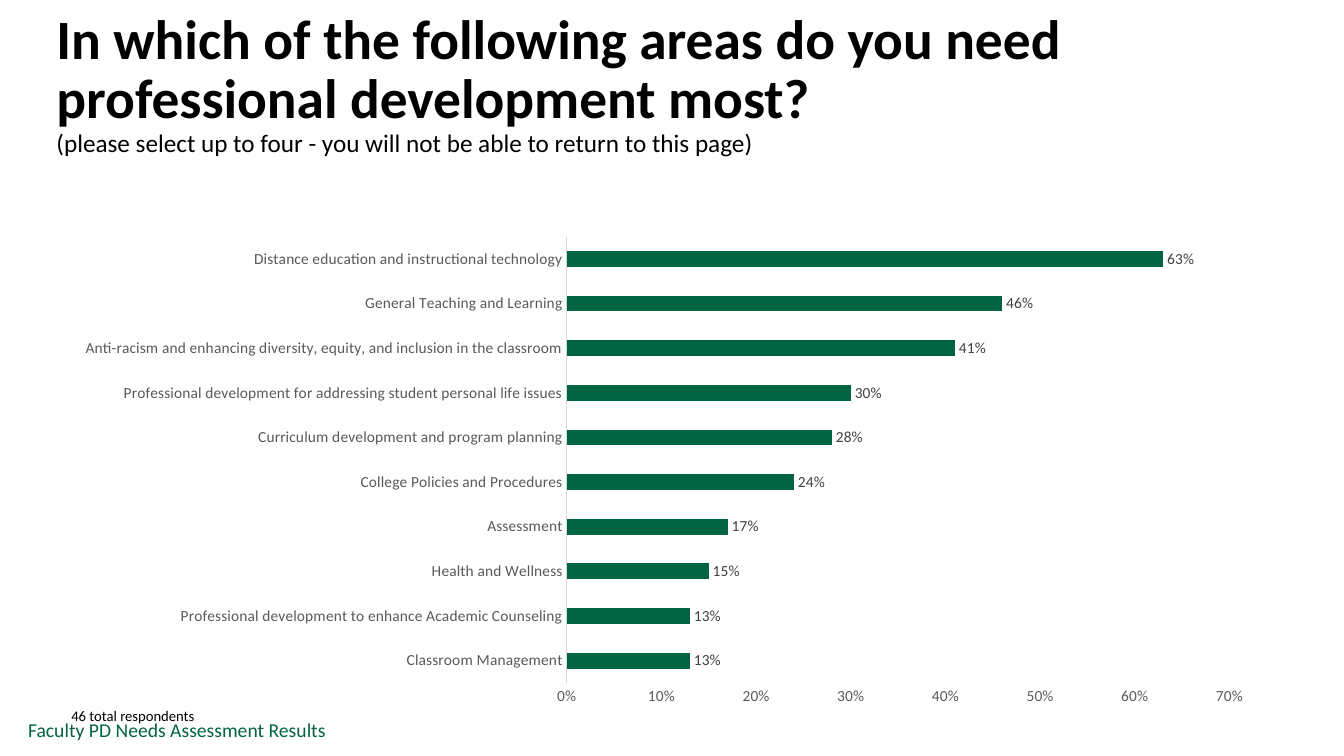
import pptx
import pptx.util
import pptx.chart.data
import pptx.dml.color
import pptx.enum.chart
import pptx.enum.text

Inches = pptx.util.Inches
Pt = pptx.util.Pt
FONT = "Calibri"
COLORS = {"black": "000000", "green": "006342", "axis_text": "595959",
          "label_text": "404040", "axis_line": "D9D9D9"}


def style_font(font, size, color, bold=False):
    font.name = FONT
    font.size = Pt(size)
    font.bold = bold
    font.color.rgb = pptx.dml.color.RGBColor.from_string(COLORS[color])


deck = pptx.Presentation()
deck.slide_width = Inches(13.33)
deck.slide_height = Inches(7.5)
slide = deck.slides.add_slide(deck.slide_layouts[5])

# Question and instruction
question = slide.shapes.title
question.left, question.top = Inches(0.46), Inches(0.4)
question.width, question.height = Inches(11.96), Inches(1.45)
question_frame = question.text_frame
question_frame.text = ("In which of the following areas do you need professional development most?\n"
                       "(please select up to four - you will not be able to return to this page)")
question_frame.word_wrap = True
question_frame.auto_size = pptx.enum.text.MSO_AUTO_SIZE.NONE
question_frame.vertical_anchor = pptx.enum.text.MSO_ANCHOR.MIDDLE
question_frame.margin_bottom = Inches(0.62)
for paragraph, size, bold in zip(question_frame.paragraphs, (39.6, 18), (True, False)):
    paragraph.alignment = pptx.enum.text.PP_ALIGN.LEFT
    paragraph.line_spacing = 0.9
    paragraph.space_before = Pt(0)
    style_font(paragraph.runs[0].font, size, "black", bold)

# Share of respondents per area, listed from the bottom bar up
areas = [
    ("Classroom Management", 0.13),
    ("Professional development to enhance Academic Counseling", 0.13),
    ("Health and Wellness", 0.15),
    ("Assessment", 0.17),
    ("College Policies and Procedures", 0.24),
    ("Curriculum development and program planning", 0.28),
    ("Professional development for addressing student personal life issues", 0.30),
    ("Anti-racism and enhancing diversity, equity, and inclusion in the classroom", 0.41),
    ("General Teaching and Learning", 0.46),
    ("Distance education and instructional technology", 0.63),
]
area_data = pptx.chart.data.CategoryChartData(number_format="0%")
area_data.categories = [area for area, share in areas]
area_data.add_series("Series 1", [share for area, share in areas])
area_chart = slide.shapes.add_chart(
    pptx.enum.chart.XL_CHART_TYPE.BAR_CLUSTERED,
    Inches(0.61), Inches(2.25), Inches(11.96), Inches(4.85), area_data).chart
area_chart.has_title = False
area_chart.has_legend = False
style_font(area_chart.font, 11, "black")

# Bars and their labels
bars = area_chart.plots[0]
bars.gap_width = 182
bars.vary_by_categories = False
bar_fill = bars.series[0].format.fill
bar_fill.solid()
bar_fill.fore_color.rgb = pptx.dml.color.RGBColor.from_string(COLORS["green"])
bars.has_data_labels = True
share_labels = bars.data_labels
share_labels.show_value = True
share_labels.number_format = "0%"
share_labels.number_format_is_linked = False
share_labels.position = pptx.enum.chart.XL_LABEL_POSITION.OUTSIDE_END
style_font(share_labels.font, 11, "label_text")

# Axes
area_axis, share_axis = area_chart.category_axis, area_chart.value_axis
for axis in (area_axis, share_axis):
    axis.has_major_gridlines = False
    axis.major_tick_mark = pptx.enum.chart.XL_TICK_MARK.NONE
    axis.minor_tick_mark = pptx.enum.chart.XL_TICK_MARK.NONE
    style_font(axis.tick_labels.font, 11, "axis_text")
area_axis.format.line.width = Pt(0.75)
area_axis.format.line.color.rgb = pptx.dml.color.RGBColor.from_string(COLORS["axis_line"])
share_axis.format.line.fill.background()
share_axis.minimum_scale, share_axis.maximum_scale = 0, 0.7
share_axis.major_unit = 0.1
share_axis.tick_labels.number_format = "0%"
share_axis.tick_labels.number_format_is_linked = False

# Respondent count and report name
for note, left, top, width, height, size, color in (
        ("46 total respondents", 0.61, 6.96, 1.5, 0.29, 10.5, "black"),
        ("Faculty PD Needs Assessment Results", 0.18, 7.07, 3.25, 0.34, 14, "green")):
    note_frame = slide.shapes.add_textbox(
        Inches(left), Inches(top), Inches(width), Inches(height)).text_frame
    note_frame.text = note
    note_frame.word_wrap = False
    note_frame.auto_size = pptx.enum.text.MSO_AUTO_SIZE.SHAPE_TO_FIT_TEXT
    style_font(note_frame.paragraphs[0].runs[0].font, size, color)

deck.save("out.pptx")
